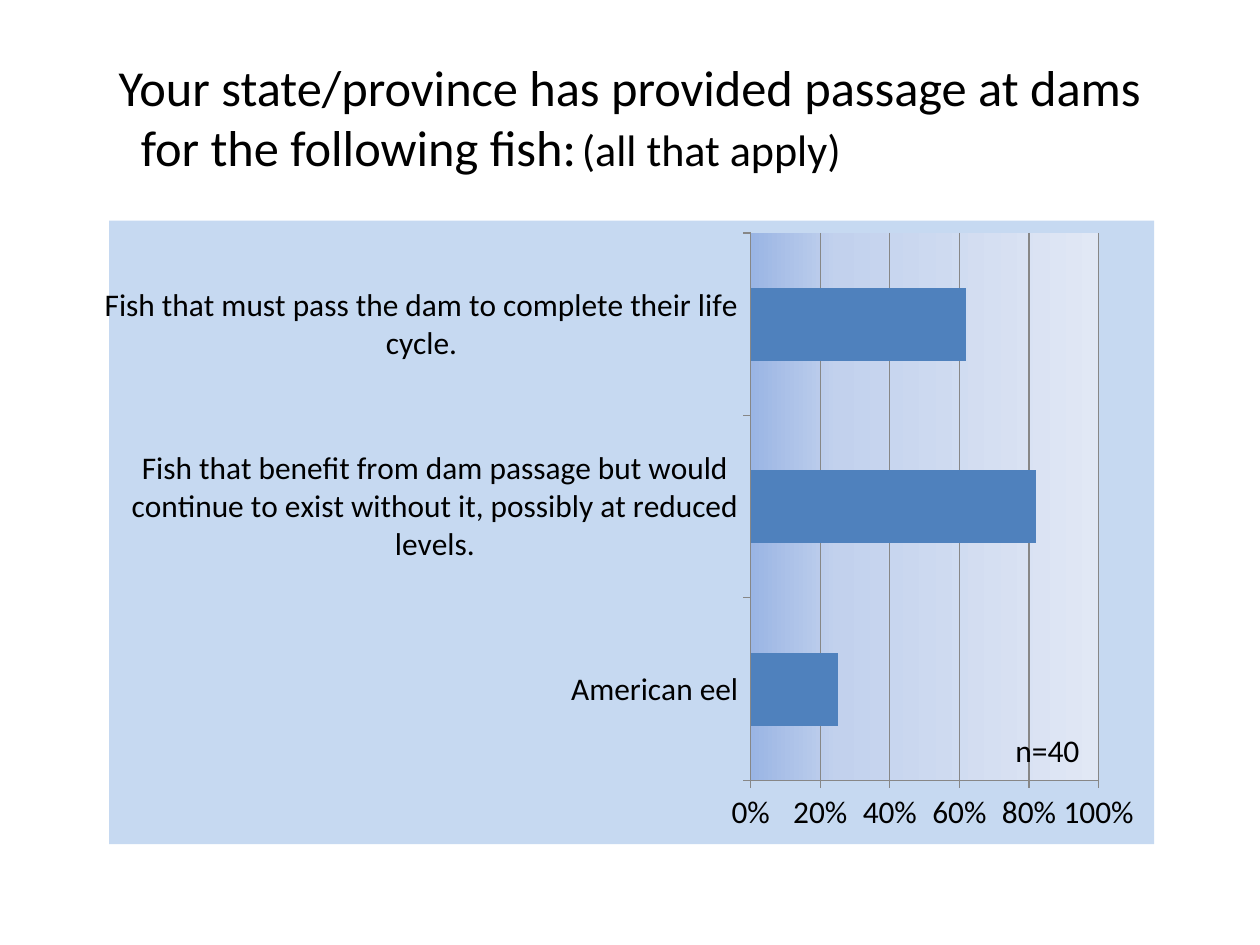
"""Build the slide on fish passage at dams with its bar chart."""
from lxml.etree import fromstring
from pptx import Presentation
from pptx.chart.data import CategoryChartData
from pptx.dml.color import RGBColor
from pptx.enum.chart import XL_CHART_TYPE, XL_TICK_MARK
from pptx.enum.text import MSO_ANCHOR, PP_ALIGN
from pptx.oxml.ns import nsdecls
from pptx.util import Inches, Pt


def color(value):
    return RGBColor.from_string(value)


def style(font, size):
    for name, value in {"name": "Calibri", "size": Pt(size), "bold": False}.items():
        setattr(font, name, value)
    font.color.rgb = color("000000")


deck = Presentation()
deck.slide_width, deck.slide_height = Inches(10), Inches(7.5)
slide = deck.slides.add_slide(deck.slide_layouts[6])

heading = slide.shapes.add_textbox(Inches(0.5), Inches(0.3), Inches(9), Inches(1.25)).text_frame
heading.word_wrap = True
heading.vertical_anchor = MSO_ANCHOR.MIDDLE
question = heading.paragraphs[0]
question.alignment = PP_ALIGN.CENTER
subject = heading.add_paragraph()
subject.alignment = PP_ALIGN.LEFT
subject_layout = subject._p.get_or_add_pPr()
for name, value in {"marL": Inches(0.52), "indent": 0}.items():
    subject_layout.set(name, str(value))
subject_layout.append(fromstring(
    f'<a:tabLst {nsdecls("a")}><a:tab pos="{Inches(6.15)}" algn="l"/></a:tabLst>'))
for paragraph, words, size in (
    (question, "Your state/province has provided passage at dams", 28.8),
    (subject, "for the following fish:\t", 28.8),
    (subject, "(all that apply)", 25.2),
):
    run = paragraph.add_run()
    run.text = words
    style(run.font, size)

passage = CategoryChartData(number_format="0%")
passage.categories = [
    "American eel",
    "Fish that benefit from dam passage but would continue to exist without it, possibly at reduced levels.",
    "Fish that must pass the dam to complete their life cycle.",
]
passage.add_series("Series 1", (0.25, 0.82, 0.62))
chart = slide.shapes.add_chart(
    XL_CHART_TYPE.BAR_CLUSTERED, Inches(0.83), Inches(1.75), Inches(8.33), Inches(4.95), passage
).chart
chart.has_legend = chart.has_title = False
style(chart.font, 18)

bars = chart.plots[0]
bars.gap_width = 150
bars.vary_by_categories = False
bars.series[0].format.fill.solid()
bars.series[0].format.fill.fore_color.rgb = color("4F81BD")

shares = chart.value_axis
for name, value in {"minimum_scale": 0, "maximum_scale": 1, "major_unit": 0.2,
                    "has_major_gridlines": True}.items():
    setattr(shares, name, value)
shares.tick_labels.number_format = "0%"
shares.tick_labels.number_format_is_linked = False
for axis in (chart.category_axis, shares):
    axis.major_tick_mark = XL_TICK_MARK.OUTSIDE
    axis.minor_tick_mark = XL_TICK_MARK.NONE
for line in (chart.category_axis.format.line, shares.format.line, shares.major_gridlines.format.line):
    line.color.rgb = color("878787")
    line.width = Pt(0.75)

plot_area = chart._chartSpace.chart.plotArea
for layout in plot_area.findall("{*}layout"):
    plot_area.remove(layout)
places = "".join(f'<c:{name} val="{value}"/>' for name, value in (
    ("layoutTarget", "inner"), ("xMode", "edge"), ("yMode", "edge"),
    ("x", 0.614), ("y", 0.02), ("w", 0.333), ("h", 0.878)))
plot_area.insert(0, fromstring(
    f'<c:layout {nsdecls("c")}><c:manualLayout>{places}</c:manualLayout></c:layout>'))

stops = "".join(f'<a:gs pos="{percent * 1000}"><a:srgbClr val="{shade}"/></a:gs>'
                for percent, shade in ((0, "9AB5E4"), (25, "C2D1ED"), (100, "E1E8F5")))
gradient = f'<a:gradFill><a:gsLst>{stops}</a:gsLst><a:lin ang="0" scaled="0"/></a:gradFill>'
backdrop = '<a:solidFill><a:srgbClr val="C6D9F1"/></a:solidFill>'
for add, fill in ((plot_area.append, gradient), (chart._chartSpace.chart.addnext, backdrop)):
    add(fromstring(f'<c:spPr {nsdecls("c", "a")}>{fill}<a:ln><a:noFill/></a:ln></c:spPr>'))

sample = slide.shapes.add_textbox(Inches(7.96), Inches(5.75), Inches(0.75), Inches(0.4)).text_frame
sample.text = "n=40"
style(sample.paragraphs[0].runs[0].font, 18)

deck.save("out.pptx")
